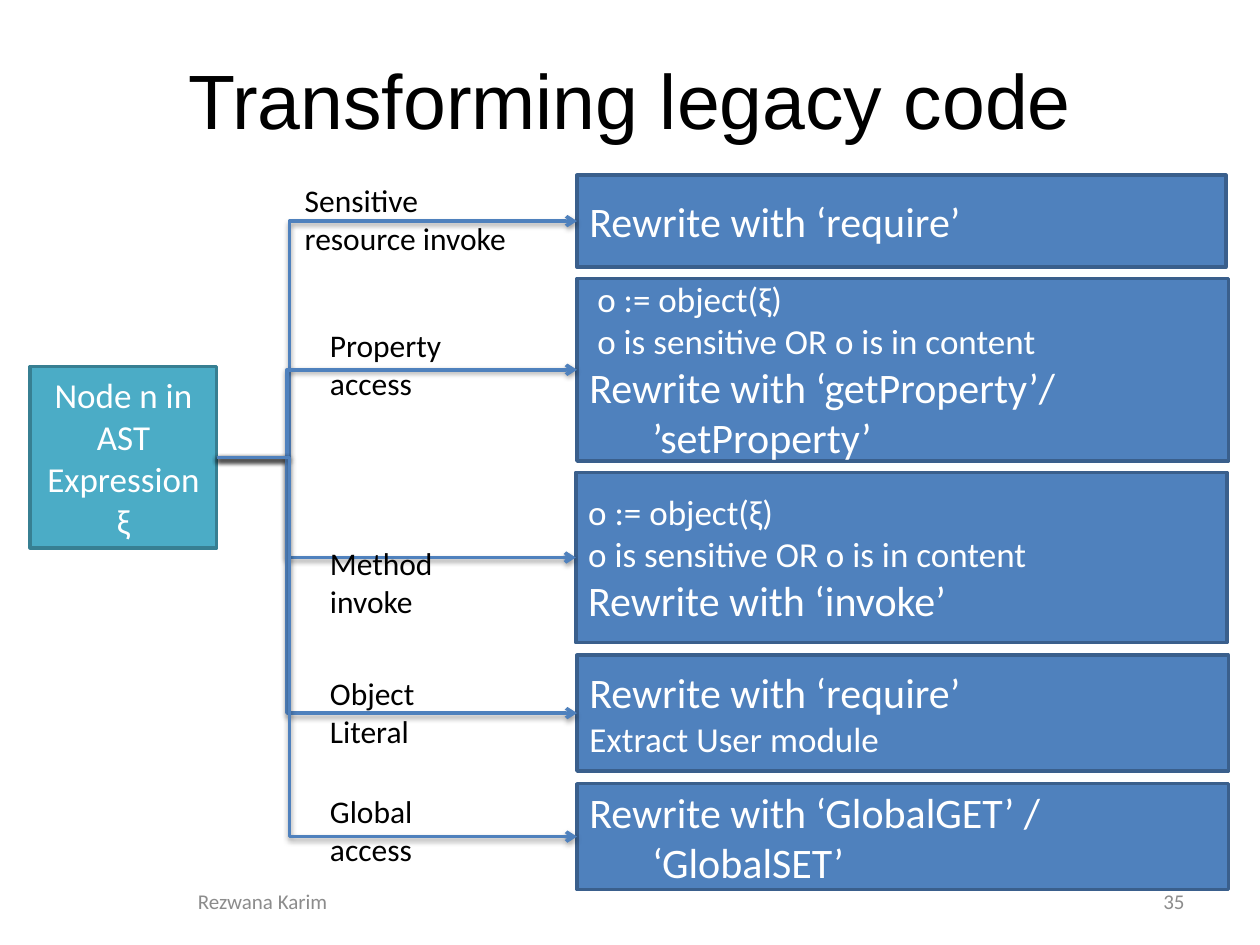
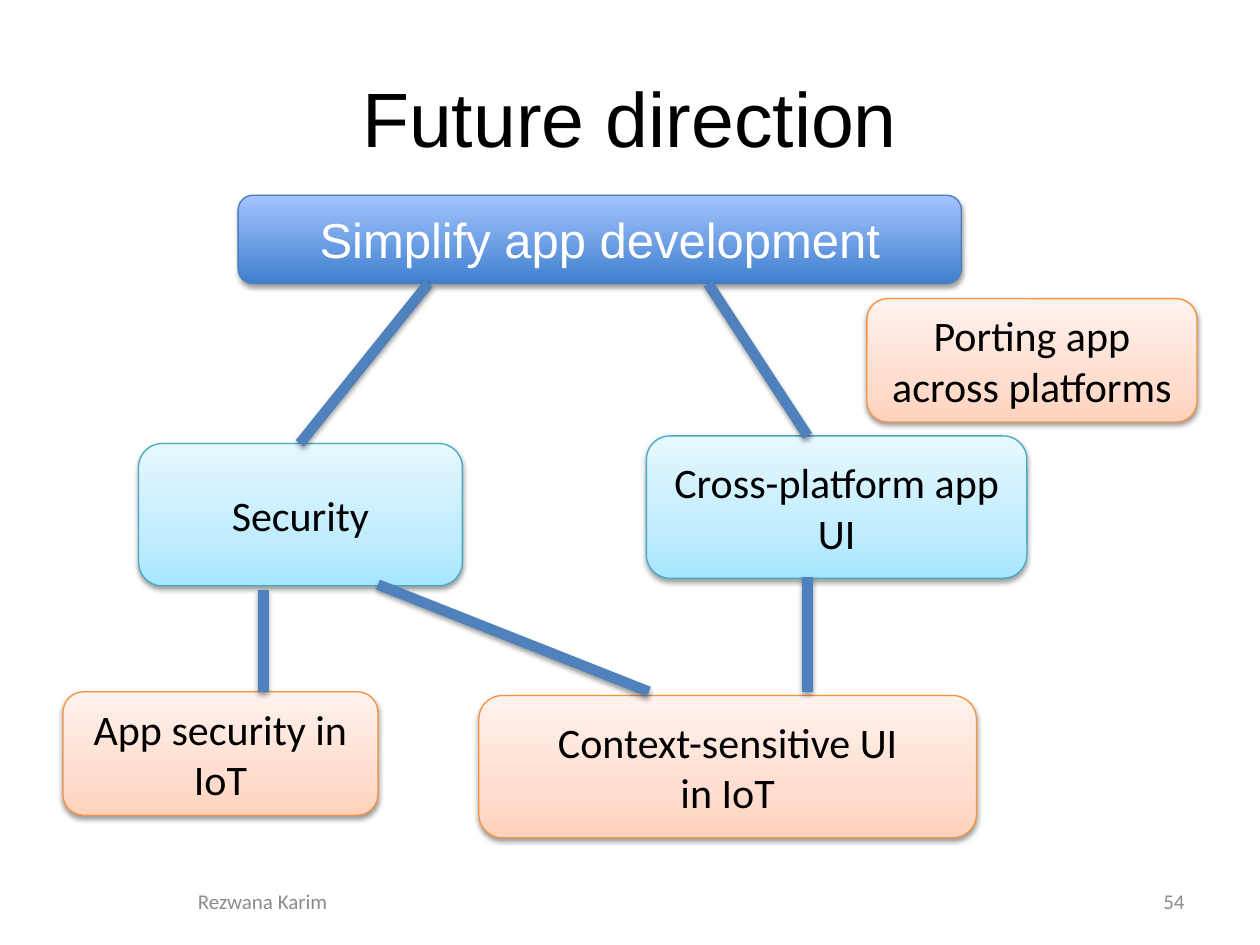
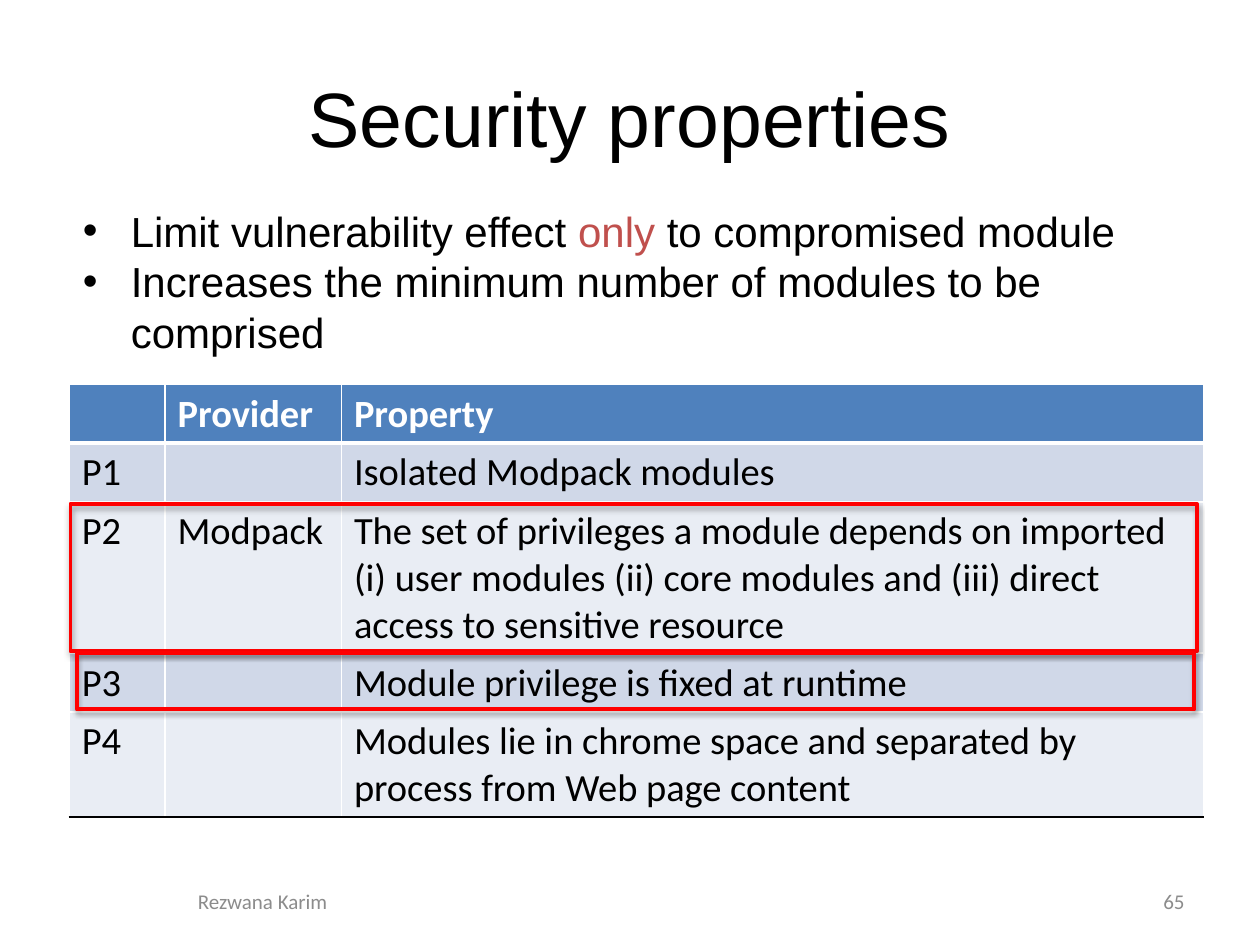
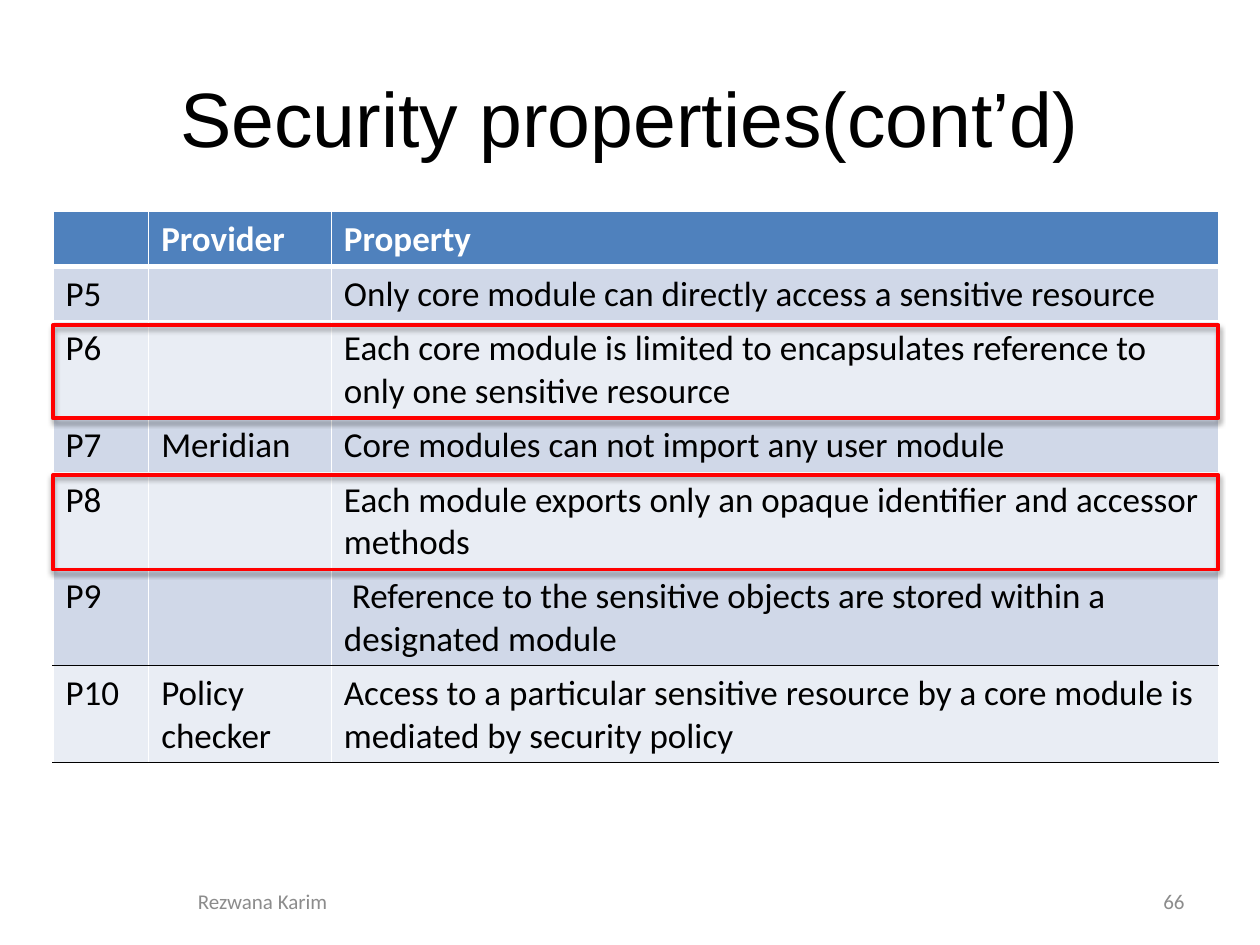
from dataclasses import dataclass

from lxml.etree import SubElement
from pptx import Presentation
from pptx.dml.color import RGBColor
from pptx.enum.shapes import MSO_CONNECTOR, MSO_SHAPE
from pptx.enum.text import MSO_ANCHOR, PP_ALIGN
from pptx.oxml import parse_xml
from pptx.oxml.ns import nsdecls, qn
from pptx.util import Inches, Pt


@dataclass(frozen=True)
class Theme:
    heading_font: str = "Arial"
    body_font: str = "Calibri"
    black: str = "000000"
    white: str = "FFFFFF"
    grey: str = "8C8C8C"
    blue: str = "4F81BD"
    dark_blue: str = "3A5F8C"
    teal: str = "4BACC6"
    dark_teal: str = "377F92"
    accent_red: str = "C0504D"
    highlight_red: str = "FF0000"
    bands: tuple = ("E9EDF4", "D0D8E8")
    title_size: int = 44
    root_size: int = 28
    large_size: int = 24
    medium_size: int = 20
    label_size: int = 18
    footer_size: int = 12


theme = Theme()


def write_text(text_frame, text, size, color=theme.black, font=theme.body_font,
               alignment=PP_ALIGN.LEFT, anchor=MSO_ANCHOR.MIDDLE):
    text_frame.word_wrap = True
    text_frame.vertical_anchor = anchor
    text_frame.text = text
    for paragraph in text_frame.paragraphs:
        paragraph.alignment = alignment
        for run in paragraph.runs:
            run.font.size = Pt(size)
            run.font.name = font
            run.font.color.rgb = RGBColor.from_string(color)


def add_shadow(shape, opacity=38, distance=1.6):
    shape.element.spPr.append(parse_xml(
        f'<a:effectLst {nsdecls("a")}><a:outerShdw blurRad="{Pt(3.1)}" dist="{Pt(distance)}" '
        f'dir="5400000" rotWithShape="0"><a:srgbClr val="{theme.black}">'
        f'<a:alpha val="{opacity * 1000}"/></a:srgbClr></a:outerShdw></a:effectLst>'))


presentation = Presentation()
presentation.slide_width = Inches(10)
presentation.slide_height = Inches(7.5)

pages = [
    ("Transforming legacy code", "35", 0.16),
    ("Future direction", "54", 0.3),
    ("Security properties", "65", 0.3),
    ("Security properties(cont’d)", "66", 0.3),
]
for title, number, title_top in pages:
    slide = presentation.slides.add_slide(presentation.slide_layouts[6])
    title_box = slide.shapes.add_textbox(Inches(0.5), Inches(title_top), Inches(9), Inches(1.25))
    write_text(title_box.text_frame, title, theme.title_size,
               font=theme.heading_font, alignment=PP_ALIGN.CENTER)
    for text, left, width, alignment in [
        ("Rezwana Karim", 0.5, 3.17, PP_ALIGN.CENTER),
        (number, 7.17, 2.33, PP_ALIGN.RIGHT),
    ]:
        footer = slide.shapes.add_textbox(Inches(left), Inches(6.95), Inches(width), Inches(0.4))
        write_text(footer.text_frame, text, theme.footer_size, theme.grey, alignment=alignment)

legacy_slide, future_slide, properties_slide, continued_slide = presentation.slides

node = legacy_slide.shapes.add_shape(
    MSO_SHAPE.RECTANGLE, Inches(0.24), Inches(2.91), Inches(1.48), Inches(1.44))
node.fill.solid()
node.fill.fore_color.rgb = RGBColor.from_string(theme.teal)
node.line.color.rgb = RGBColor.from_string(theme.dark_teal)
node.line.width = Pt(2)
node.shadow.inherit = False
write_text(node.text_frame, "Node n in AST\nExpression\nξ", theme.medium_size, theme.white,
           alignment=PP_ALIGN.CENTER)

branches = [
    ("Sensitive resource invoke", (2.32, 1.39, 2.02), (4.58, 1.39, 5.15, 0.73), 0.202,
     "Rewrite with ‘require’"),
    ("Property access", (2.52, 2.54, 1.55), (4.58, 2.21, 5.17, 1.45), 0.195,
     " o := object(ξ)\n o is sensitive OR o is in content\n"
     "Rewrite with ‘getProperty’/\v\t’setProperty’"),
    ("Method invoke", (2.52, 4.27, 1.55), (4.57, 3.75, 5.17, 1.35), 0.194,
     "o := object(ξ)\no is sensitive OR o is in content\nRewrite with ‘invoke’"),
    ("Object Literal", (2.52, 5.3, 1.55), (4.58, 5.2, 5.17, 0.92), 0.195,
     "Rewrite with ‘require’\nExtract User module"),
    ("Global access", (2.52, 6.24, 1.55), (4.58, 6.22, 5.17, 0.84), 0.202,
     "Rewrite with ‘GlobalGET’ /\v\t‘GlobalSET’"),
]
for label, label_place, rule_place, bend, text in branches:
    rule_box = legacy_slide.shapes.add_shape(MSO_SHAPE.RECTANGLE, *map(Inches, rule_place))
    rule_box.fill.solid()
    rule_box.fill.fore_color.rgb = RGBColor.from_string(theme.blue)
    rule_box.line.color.rgb = RGBColor.from_string(theme.dark_blue)
    rule_box.line.width = Pt(2)
    rule_box.shadow.inherit = False
    write_text(rule_box.text_frame, text, theme.medium_size, theme.white)
    for paragraph in rule_box.text_frame.paragraphs:
        if paragraph.text.startswith("Rewrite"):
            for run in paragraph.runs:
                run.font.size = Pt(theme.large_size)

    arrow = legacy_slide.shapes.add_connector(MSO_CONNECTOR.ELBOW, 0, 0, 0, 0)
    arrow.begin_connect(node, 3)
    arrow.end_connect(rule_box, 1)
    arrow.line.color.rgb = RGBColor.from_string(theme.blue)
    arrow.line.width = Pt(2)
    properties = arrow.element.spPr
    guides = properties.find(qn("a:prstGeom")).find(qn("a:avLst"))
    SubElement(guides, qn("a:gd"), name="adj1", fmla=f"val {round(bend * 100000)}")
    SubElement(properties.find(qn("a:ln")), qn("a:tailEnd"), type="arrow")
    add_shadow(arrow)

    label_box = legacy_slide.shapes.add_textbox(*map(Inches, label_place), Inches(0.71))
    write_text(label_box.text_frame, label, theme.label_size, anchor=MSO_ANCHOR.TOP)

root_style = ([(0, "3F80CE"), (100, "A4C4FF")], "4B7EBC")
topic_style = ([(0, "A7E6FF"), (35, "C1EDFF"), (100, "E7F8FF")], "46AAC5")
goal_style = ([(0, "FFD2BD"), (35, "FFDED0"), (100, "FFF2ED")], "F69240")
directions = [
    ("Simplify app development", (1.89, 1.55, 5.74, 0.7), root_style),
    ("Security", (1.1, 3.52, 2.57, 1.13), topic_style),
    ("Cross-platform app UI", (5.13, 3.46, 3.02, 1.13), topic_style),
    ("Context-sensitive UI\nin IoT", (3.8, 5.52, 3.95, 1.13), goal_style),
    ("App security in IoT", (0.5, 5.49, 2.5, 0.98), goal_style),
    ("Porting app across platforms", (6.88, 2.37, 2.62, 0.98), goal_style),
]
for text, place, style in directions:
    stops, outline = style
    box = future_slide.shapes.add_shape(MSO_SHAPE.ROUNDED_RECTANGLE, *map(Inches, place))
    box.fill.gradient()
    box.fill.gradient_angle = 90
    stop_list = box.element.spPr.find(qn("a:gradFill")).find(qn("a:gsLst"))
    stop_list.clear()
    for position, color in stops:
        stop = SubElement(stop_list, qn("a:gs"), pos=str(position * 1000))
        SubElement(stop, qn("a:srgbClr"), val=color)
    box.line.color.rgb = RGBColor.from_string(outline)
    box.line.width = Pt(0.75)
    add_shadow(box)
    if style is root_style:
        write_text(box.text_frame, text, theme.root_size, theme.white,
                   theme.heading_font, PP_ALIGN.CENTER)
    else:
        write_text(box.text_frame, text, theme.large_size, alignment=PP_ALIGN.CENTER)

links = [
    (3.4, 2.25, 2.38, 3.52),
    (5.62, 2.25, 6.41, 3.46),
    (3, 4.64, 5.15, 5.49),
    (6.41, 5.49, 6.41, 4.58),
    (2.09, 4.68, 2.09, 5.49),
]
for ends in links:
    link = future_slide.shapes.add_connector(MSO_CONNECTOR.STRAIGHT, *map(Inches, ends))
    link.line.color.rgb = RGBColor.from_string(theme.blue)
    link.line.width = Pt(6)
    add_shadow(link)

bullet_box = properties_slide.shapes.add_textbox(
    Inches(0.56), Inches(1.58), Inches(8.94), Inches(1.31))
write_text(bullet_box.text_frame,
           "Limit vulnerability effect \nIncreases the minimum number of modules to be comprised",
           theme.large_size, font=theme.heading_font, anchor=MSO_ANCHOR.TOP)
for text, color in [("only", theme.accent_red), (" to compromised module", theme.black)]:
    run = bullet_box.text_frame.paragraphs[0].add_run()
    run.text = text
    run.font.size = Pt(theme.large_size)
    run.font.name = theme.heading_font
    run.font.color.rgb = RGBColor.from_string(color)
for paragraph in bullet_box.text_frame.paragraphs:
    paragraph_properties = paragraph._p.get_or_add_pPr()
    paragraph_properties.set("marL", str(Inches(0.38)))
    paragraph_properties.set("indent", str(-Inches(0.38)))
    SubElement(paragraph_properties, qn("a:buFont"), typeface=theme.heading_font)
    SubElement(paragraph_properties, qn("a:buChar"), char="•")

header = ("", "Provider", "Property")
first_rows = [
    header,
    ("P1", "", "Isolated Modpack modules"),
    ("P2", "Modpack", "The set of privileges a module depends on imported\n"
     "(i) user modules (ii) core modules and (iii) direct access to sensitive resource"),
    ("P3", "", "Module privilege is fixed at runtime"),
    ("P4", "", "Modules lie in chrome space and separated by process from Web page content"),
]
second_rows = [
    header,
    ("P5", "", "Only core module can directly access a sensitive resource"),
    ("P6", "", "Each core module is limited to encapsulates reference to "
     "only one sensitive resource"),
    ("P7", "Meridian", "Core modules can not import any user module"),
    ("P8", "", "Each module exports only an opaque identifier and accessor methods"),
    ("P9", "", " Reference to the sensitive objects are stored within a designated module"),
    ("P10", "Policy checker", "Access to a particular sensitive resource by a core module is "
     "mediated by security policy"),
]
tables = [
    (properties_slide, first_rows, (0.55, 3.05), (0.76, 1.4, 6.84), 22, {4},
     [(0.56, 4, 8.94, 1.17), (0.61, 5.18, 8.87, 0.45)]),
    (continued_slide, second_rows, (0.42, 1.68), (0.76, 1.45, 7.04), 20, {5, 6},
     [(0.42, 3.77, 9.25, 0.75), (0.42, 2.58, 9.25, 0.74)]),
]
for slide, rows, corner, widths, size, ruled_rows, highlights in tables:
    table = slide.shapes.add_table(
        len(rows), len(widths), *map(Inches, corner),
        Inches(sum(widths)), Inches(0.41 * len(rows))).table
    for column, width in zip(table.columns, widths):
        column.width = Inches(width)
    for row_index, row in enumerate(rows):
        is_header = row_index == 0
        top_color = theme.black if row_index - 1 in ruled_rows else theme.white
        bottom_color = theme.black if row_index in ruled_rows else theme.white
        borders = [
            ("lnL", theme.white, 1),
            ("lnR", theme.white, 1),
            ("lnT", top_color, 3 if row_index == 1 else 1),
            ("lnB", bottom_color, 3 if is_header else 1),
        ]
        for column_index, text in enumerate(row):
            cell = table.cell(row_index, column_index)
            write_text(cell.text_frame, text, size, theme.white if is_header else theme.black)
            cell.vertical_anchor = MSO_ANCHOR.TOP
            for paragraph in cell.text_frame.paragraphs:
                for run in paragraph.runs:
                    run.font.bold = is_header
            cell_properties = cell._tc.get_or_add_tcPr()
            for edge, color, width in borders:
                border = SubElement(cell_properties, qn(f"a:{edge}"), w=str(Pt(width)))
                border_fill = SubElement(border, qn("a:solidFill"))
                SubElement(border_fill, qn("a:srgbClr"), val=color)
            cell.fill.solid()
            cell.fill.fore_color.rgb = RGBColor.from_string(
                theme.blue if is_header else theme.bands[row_index % 2])
    for place in highlights:
        highlight = slide.shapes.add_shape(MSO_SHAPE.RECTANGLE, *map(Inches, place))
        highlight.fill.background()
        highlight.line.color.rgb = RGBColor.from_string(theme.highlight_red)
        highlight.line.width = Pt(2.25)
        add_shadow(highlight, opacity=35, distance=1.8)

presentation.save("out.pptx")
